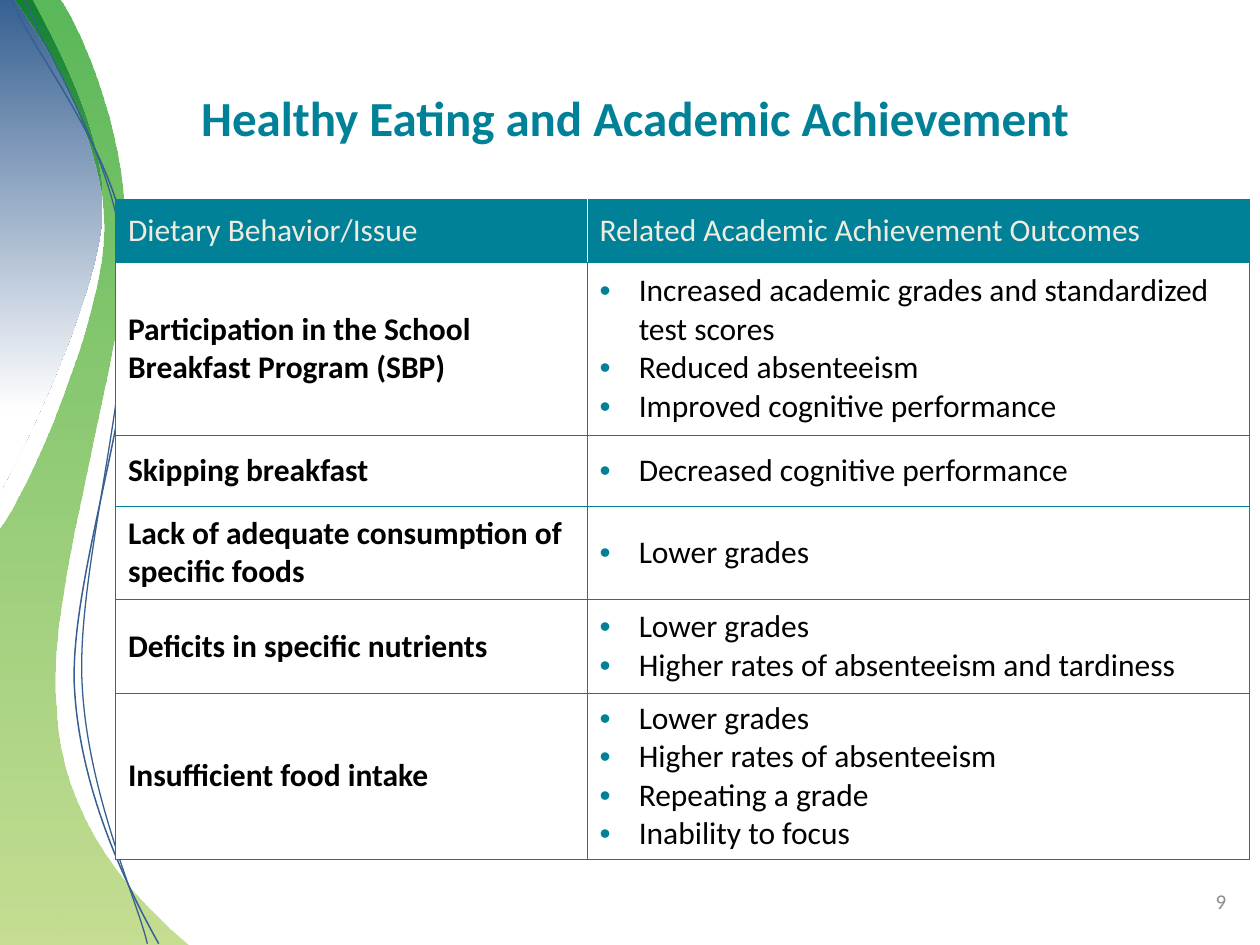
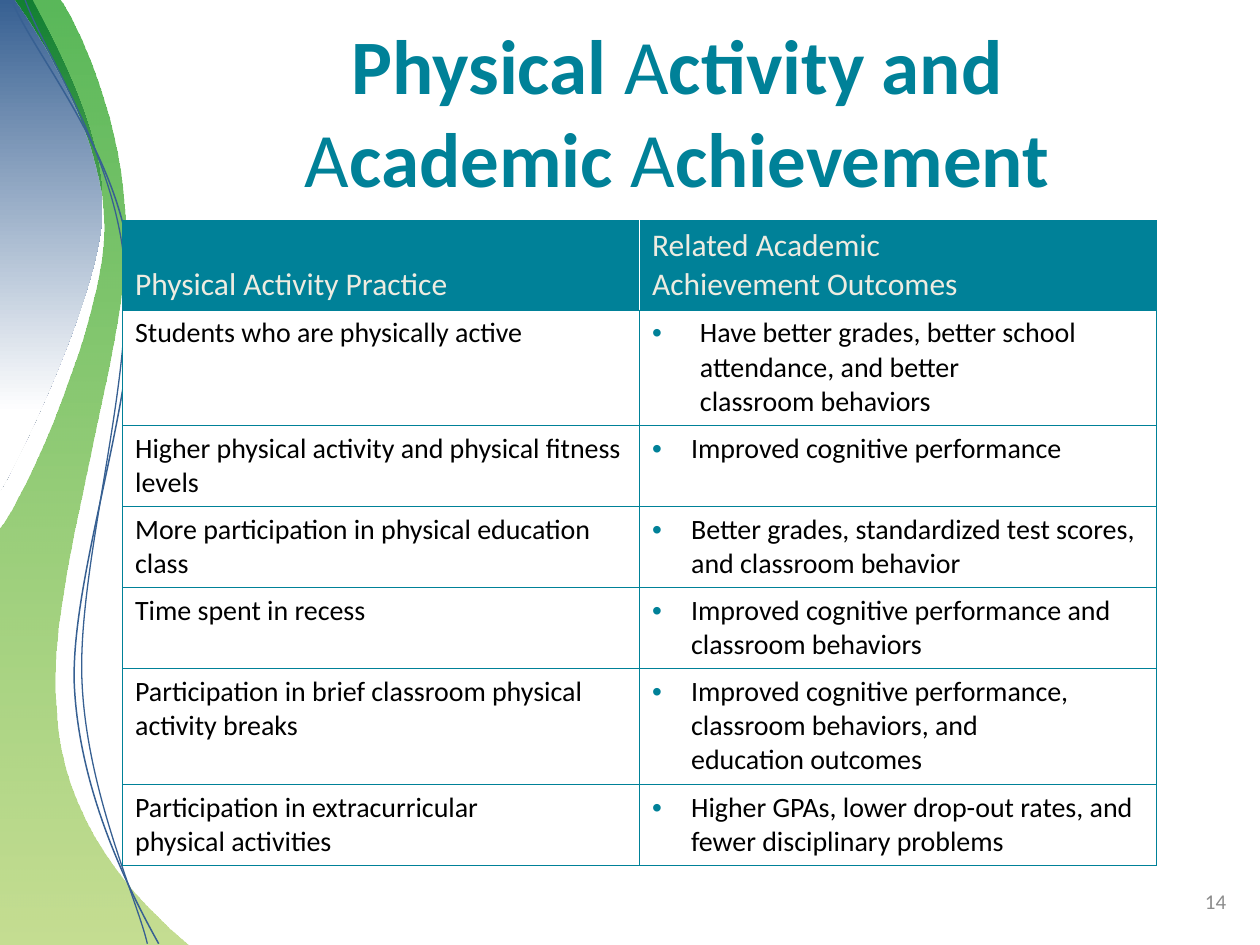
import lxml.etree
import pptx
import pptx.dml.color
import pptx.enum.text
import pptx.oxml
import pptx.oxml.ns
import pptx.util

COLORS = {
    "teal": "008198", "cream": "EEECE1", "white": "FFFFFF", "black": "000000",
    "blue": "376092", "green": "009200", "lime": "95C238", "gray": "8C8C8C",
}
ALIGN = pptx.enum.text.PP_ALIGN
ANCHOR = pptx.enum.text.MSO_ANCHOR
CELL = pptx.util.Inches(0.1)  # the page is a grid of 100 columns by 75 rows
COLUMNS, ROWS = 100, 75

# Each outline is a start point and steps: two numbers draw a line, six a curve
BLUE_WAVE = [(0, 39), (1.4, 36.8, 7.7, 23.8, 8.1, 17.3),
             (8.6, 10.8, 4, 2.9, 2.6, 0), (0, 0)]
GREEN_WAVE = [(0, 75), (0, 42), (2.2, 39.3, 8.3, 25.2, 8.3, 18.1),
              (8.3, 11, 3.4, 3.1, 1.2, 0), (4.8, 0),
              (5.8, 1.2, 10.1, 9.7, 10, 19), (10, 28.3, 3.7, 46.4, 4.5, 55.7),
              (4.7, 65.3, 11, 71.6, 15, 75)]
OUTER_STRAND = [(12.6, 74.9), (10.6, 71.3, 6.3, 63.2, 5.9, 54.3),
                (5.6, 45.4, 11.3, 30.4, 10.4, 21.4), (9.6, 12.4, 2.9, 4.6, 1, 0.2)]
INNER_STRAND = [(11.7, 74.9), (10.9, 71.4, 6.8, 62.7, 6.5, 53.8),
                (6.2, 44.8, 10.6, 30.1, 9.9, 21.1), (9.1, 12.2, 3.6, 4.4, 2, 0)]


def color(name):
    return pptx.dml.color.RGBColor.from_string(COLORS[name])


def grid(lengths):
    return tuple(round(length * CELL) for length in lengths)


def add_element(parent, tag, **attributes):
    element = lxml.etree.SubElement(parent, pptx.oxml.ns.qn(tag))
    for name, value in attributes.items():
        element.set(name, str(value))
    return element


class Page:
    """Holds the deck style and the current slide."""

    font = "Calibri"

    def __init__(self, deck):
        self.deck = deck
        self.slide = None

    def start(self, number):
        self.slide = self.deck.slides.add_slide(self.deck.slide_layouts[6])
        self.wave(BLUE_WAVE, [(0, "blue", 100), (84, "white", 100)])
        self.wave(GREEN_WAVE, [(0, "green", 65), (100, "lime", 55)])
        self.strand(OUTER_STRAND, 0.85)
        self.strand(INNER_STRAND, 0.75)
        self.text((75.8, 69.5, 22.5, 4), [(str(number), False)], 12, "gray", ALIGN.RIGHT)

    def outline(self, steps, closed):
        start, *moves = [grid(step) for step in steps]
        builder = self.slide.shapes.build_freeform(*start)
        points = [move[index:index + 2] for move in moves for index in range(0, len(move), 2)]
        builder.add_line_segments(points, close=closed)
        shape = builder.convert_to_shape()
        shape.shadow.inherit = False
        # Join the three points of each curve into one Bezier segment
        lines = iter(list(shape._element.iter(pptx.oxml.ns.qn("a:lnTo"))))
        for move in moves:
            line = next(lines)
            if len(move) == 6:
                line.tag = pptx.oxml.ns.qn("a:cubicBezTo")
                for control in (next(lines), next(lines)):
                    line.append(control[0])
                    control.getparent().remove(control)
        return shape

    def wave(self, steps, stops):
        shape = self.outline(steps, True)
        shape.line.fill.background()
        shape.fill.gradient()
        gradient = shape._element.spPr.find(pptx.oxml.ns.qn("a:gradFill"))
        for child in list(gradient):
            gradient.remove(child)
        stop_list = add_element(gradient, "a:gsLst")
        for position, name, opacity in stops:
            stop = add_element(stop_list, "a:gs", pos=position * 1000)
            tint = add_element(stop, "a:srgbClr", val=COLORS[name])
            if opacity < 100:
                add_element(tint, "a:alpha", val=opacity * 1000)
        add_element(gradient, "a:lin", ang=90 * 60000, scaled=0)

    def strand(self, steps, width):
        shape = self.outline(steps, False)
        shape.fill.background()
        shape.line.color.rgb = color("blue")
        shape.line.width = pptx.util.Pt(width)

    def style(self, para, size, name, bold=None):
        para.font.name = self.font
        para.font.size = pptx.util.Pt(size)
        para.font.color.rgb = color(name)
        para.font.bold = bold

    def text(self, place, spans, size, name, align):
        box = self.slide.shapes.add_textbox(*grid(place))
        frame = box.text_frame
        frame.word_wrap = True
        frame.vertical_anchor = ANCHOR.MIDDLE
        para = frame.paragraphs[0]
        para.alignment = align
        self.style(para, size, name)
        for words, bold in spans:
            span = para.add_run()
            span.text = words.rstrip("\n")
            span.font.bold = bold
            if words.endswith("\n"):
                para.add_line_break()

    def title(self, place, spans, size):
        self.text(place, spans, size, "teal", ALIGN.CENTER)

    def bullet(self, para, indent):
        properties = para._p.get_or_add_pPr()
        hang = round(indent * CELL)
        properties.set("marL", str(hang))
        properties.set("indent", str(-hang))
        add_element(add_element(properties, "a:buClr"), "a:srgbClr", val=COLORS["teal"])
        add_element(properties, "a:buFont", typeface="Arial")
        add_element(properties, "a:buChar", char="•")

    def borders(self, cell, sides):
        properties = cell._tc.get_or_add_tcPr()
        for index, side in enumerate("LRTB"):
            edge = add_element(properties, "a:ln" + side, w=pptx.util.Pt(0.5))
            fill = add_element(edge, "a:solidFill")
            add_element(fill, "a:srgbClr", val=COLORS[sides.get(side, "teal")])
            properties.insert(index, edge)

    def fill_cell(self, cell, lines, size, ink, paper, anchor, bold=False, indent=None):
        cell.fill.solid()
        cell.fill.fore_color.rgb = color(paper)
        cell.vertical_anchor = anchor
        frame = cell.text_frame
        for index, line in enumerate(lines):
            para = frame.add_paragraph() if index else frame.paragraphs[0]
            para.text = line
            if indent:
                self.bullet(para, indent)
            self.style(para, size, ink, bold)

    def table(self, corner, widths, heights, header, rows, size, anchors, bold_lead, wide_row=None):
        place = (*corner, sum(widths), sum(heights))
        frame = self.slide.shapes.add_table(len(rows) + 1, len(widths), *grid(place))
        table = frame.table
        table.first_row = table.horz_banding = False
        for column, width in zip(table.columns, grid(widths)):
            column.width = width
        for row, height in zip(table.rows, grid(heights)):
            row.height = height
        head_anchor, body_anchor = anchors
        for index, words in enumerate(header):
            cell = table.cell(0, index)
            self.fill_cell(cell, [words], 18, "cream", "teal", head_anchor)
            self.borders(cell, {"L" if index else "R": "white"})
        for index, (lead, outcomes) in enumerate(rows, 1):
            lead_cell, outcome_cell = table.cell(index, 0), table.cell(index, 1)
            self.fill_cell(lead_cell, [lead], size, "black", "white", body_anchor, bold_lead)
            self.fill_cell(outcome_cell, outcomes, size, "black", "white", body_anchor,
                           indent=3.8 if index == wide_row else 3.1)
            for cell in (lead_cell, outcome_cell):
                self.borders(cell, {})


def healthy_eating(page):
    page.start(9)
    page.title((5.4, 3, 90, 12.5), [("Healthy Eating and Academic Achievement", True)], 28)
    rows = [
        ("Participation in the School Breakfast Program (SBP)",
         ["Increased academic grades and standardized test scores",
          "Reduced absenteeism", "Improved cognitive performance"]),
        ("Skipping breakfast", ["Decreased cognitive performance"]),
        ("Lack of adequate consumption of specific foods", ["Lower grades"]),
        ("Deficits in specific nutrients",
         ["Lower grades", "Higher rates of absenteeism and tardiness"]),
        ("Insufficient food intake",
         ["Lower grades", "Higher rates of absenteeism", "Repeating a grade",
          "Inability to focus"]),
    ]
    page.table((9.16, 15.8), (37.44, 52.6), (5, 13.74, 5.63, 7.42, 7.42, 13.2),
               ("Dietary Behavior/Issue", "Related Academic Achievement Outcomes"),
               rows, 18, (ANCHOR.MIDDLE, ANCHOR.MIDDLE), True)


def physical_activity(page):
    page.start(14)
    page.title((11.65, 2.5, 84.2, 12.5),
               [("Physical ", True), ("A", False), ("ctivity and\n", True), ("A", False),
                ("cademic ", True), ("A", False), ("chievement", True)], 44)
    rows = [
        ("Students who are physically active",
         ["Have better grades, better school attendance, and better \nclassroom behaviors"]),
        ("Higher physical activity and physical fitness levels",
         ["Improved cognitive performance"]),
        ("More participation in physical education class",
         ["Better grades, standardized test scores, and classroom behavior"]),
        ("Time spent in recess", ["Improved cognitive performance and classroom behaviors"]),
        ("Participation in brief classroom physical activity breaks",
         ["Improved cognitive performance, classroom behaviors, and \neducation outcomes"]),
        ("Participation in extracurricular \nphysical activities",
         ["Higher GPAs, lower drop-out rates, and fewer disciplinary problems"]),
    ]
    short, tall = 6.43, 9.17
    page.table((9.73, 17.5), (41.03, 41.03), (7.1, tall, short, short, short, tall, short),
               ("Physical Activity Practice", "Related Academic \nAchievement Outcomes"),
               rows, 16, (ANCHOR.BOTTOM, ANCHOR.TOP), False, wide_row=1)


def main():
    deck = pptx.Presentation()
    deck.slide_width, deck.slide_height = COLUMNS * CELL, ROWS * CELL
    page = Page(deck)
    healthy_eating(page)
    physical_activity(page)
    deck.save("out.pptx")


if __name__ == "__main__":
    main()
